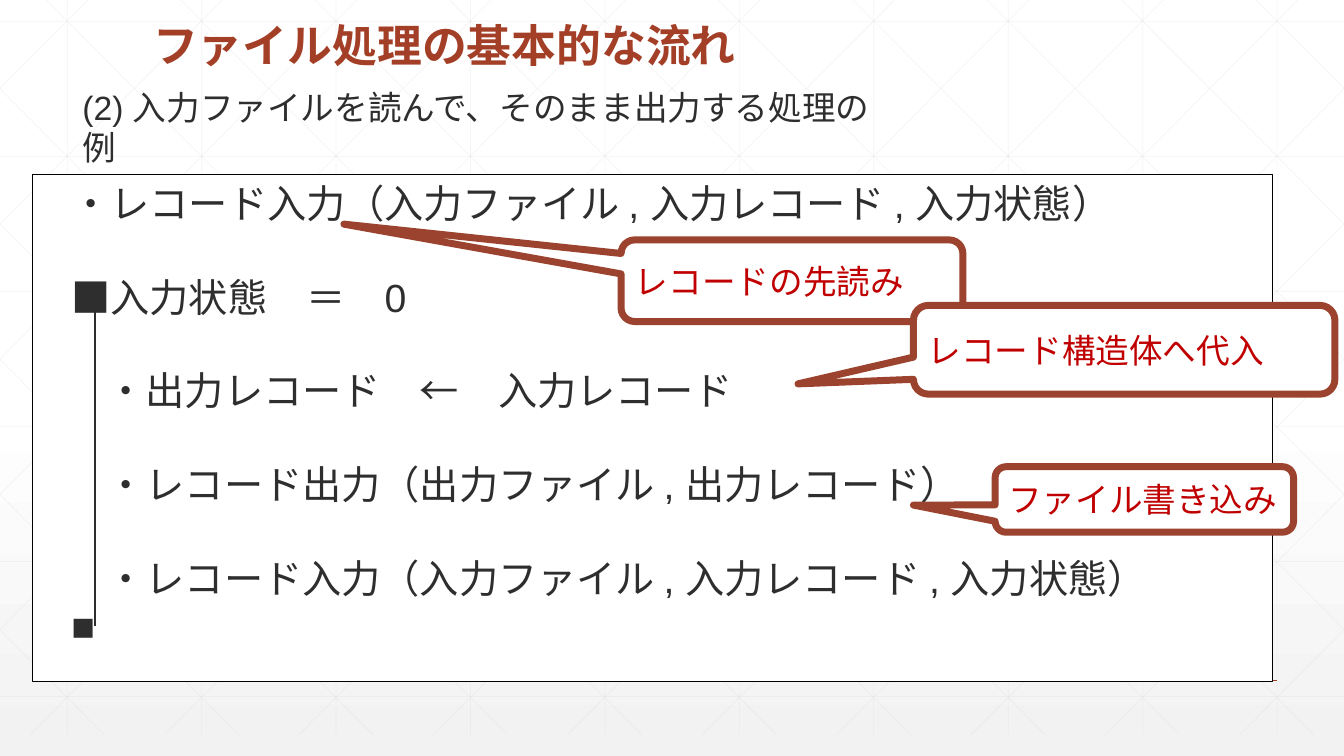
import dataclasses

import lxml.etree
import pptx
import pptx.dml.color
import pptx.enum.shapes
import pptx.enum.text
import pptx.oxml.ns
import pptx.util

Inches = pptx.util.Inches
Shape = pptx.enum.shapes.MSO_SHAPE
Anchor = pptx.enum.text.MSO_ANCHOR
qn = pptx.oxml.ns.qn


@dataclasses.dataclass(frozen=True)
class Theme:
    latin: str = "Arial"
    japanese: str = "Noto Sans CJK JP"
    title: str = "A43F27"
    text: str = "2D2E2D"
    note: str = "C00000"
    note_edge: str = "9B432E"
    grid: str = "D9D9D9"
    white: str = "FFFFFF"
    black: str = "000000"
    shade: str = "F2F2F2"
    title_size: int = 32
    code_size: int = 28
    note_size: int = 24


def rgb(value):
    return pptx.dml.color.RGBColor.from_string(value)


class SlideBuilder:
    def __init__(self, slide, theme):
        self.slide = slide
        self.theme = theme

    def background(self):
        fill = self.slide.background.fill
        fill.gradient()
        fill.gradient_angle = 270
        for stop, position, color in zip(fill.gradient_stops, (0.53, 1),
                                         (self.theme.white, self.theme.shade)):
            stop.position = position
            stop.color.rgb = rgb(color)

    def line(self, start, end, color, width, opacity=None):
        line = self.slide.shapes.add_connector(
            pptx.enum.shapes.MSO_CONNECTOR.STRAIGHT,
            *(Inches(value) for value in (*start, *end)))
        line.line.color.rgb = rgb(color)
        line.line.width = pptx.util.Pt(width)
        properties = line._element.spPr
        if opacity is not None:
            tint = properties.find(".//" + qn("a:srgbClr"))
            lxml.etree.SubElement(tint, qn("a:alpha"), val=str(opacity * 1000))
        lxml.etree.SubElement(properties, qn("a:effectLst"))

    def paragraph(self, para, text, size, color, bold=False):
        para.alignment = pptx.enum.text.PP_ALIGN.LEFT
        span = para.add_run()
        span.text = text
        span.font.name = self.theme.latin
        span.font.size = pptx.util.Pt(size)
        span.font.bold = bold
        span.font.color.rgb = rgb(color)
        lxml.etree.SubElement(span.font._element, qn("a:ea"),
                              typeface=self.theme.japanese)

    def text(self, area, text, size, color, anchor=Anchor.TOP, bold=False):
        box = self.slide.shapes.add_textbox(*map(Inches, area))
        box.text_frame.word_wrap = True
        box.text_frame.vertical_anchor = anchor
        para = box.text_frame.paragraphs[0]
        self.paragraph(para, text, size, color, bold)
        return para

    def shape(self, kind, area, edge, width, anchor):
        shape = self.slide.shapes.add_shape(kind, *map(Inches, area))
        shape.shadow.inherit = False
        shape.fill.solid()
        shape.fill.fore_color.rgb = rgb(self.theme.white)
        shape.line.color.rgb = rgb(edge)
        shape.line.width = pptx.util.Pt(width)
        shape.text_frame.word_wrap = True
        shape.text_frame.vertical_anchor = anchor
        return shape

    def code(self, area, lines, pitch):
        frame = self.shape(Shape.RECTANGLE, area, self.theme.black, 0.5,
                           Anchor.TOP).text_frame
        for index, (text, indent, gap) in enumerate(lines):
            para = frame.add_paragraph() if index else frame.paragraphs[0]
            para.line_spacing = pptx.util.Pt(pitch)
            para.space_before = pptx.util.Pt(gap * pitch)
            para._p.get_or_add_pPr().set("marL", str(Inches(indent)))
            self.paragraph(para, text, self.theme.code_size, self.theme.text)

    def callout(self, area, pointer, text):
        shape = self.shape(Shape.ROUNDED_RECTANGULAR_CALLOUT, area,
                           self.theme.note_edge, 5, Anchor.MIDDLE)
        shape.adjustments[0], shape.adjustments[1] = pointer
        self.paragraph(shape.text_frame.paragraphs[0], text,
                       self.theme.note_size, self.theme.note)

    def grid(self, width, top, bottom):
        step, run = 4 / 3, 7.45
        slope = (bottom - top) / run
        lines = []
        for column in range(10):
            x = step * (column + 0.5)
            lines.append(((x, top), (x, bottom)))
        for row in range(6):
            y = 0.21 + 1.34 * row
            lines.append(((0, y), (width, y)))
        # Diagonals are clipped at the slide sides and mirrored
        for column in range(-5, 10):
            x = 0.25 + step * column
            left, right = max(x, 0), min(x + run, width)
            y_left = top + (left - x) * slope
            y_right = top + (right - x) * slope
            lines.append(((left, y_left), (right, y_right)))
            lines.append(((width - left, y_left), (width - right, y_right)))
        for start, end in lines:
            self.line(start, end, self.theme.grid, 0.5, opacity=25)


def main():
    theme = Theme()
    deck = pptx.Presentation()
    deck.slide_width, deck.slide_height = Inches(13.33), Inches(7.5)
    page = SlideBuilder(deck.slides.add_slide(deck.slide_layouts[6]), theme)

    # Backdrop
    page.background()
    page.grid(13.33, -0.21, 7.29)
    page.line((0.67, 6.75), (12.67, 6.75), theme.title, 1)

    # Heading
    title = page.text((1.42, -0.48, 10.5, 1.25), "ファイル処理の基本的な流れ",
                      theme.title_size, theme.title, Anchor.BOTTOM, bold=True)
    title.line_spacing = 0.9

    # Pseudocode: text, indent, lines of space before
    outer, inner = 0.29, 0.64
    page.code((0.32, 1.73, 12.3, 5.03), [
        ("・レコード入力（入力ファイル , 入力レコード , 入力状態）", outer, 0),
        ("■入力状態　＝　0", outer, 1),
        ("・出力レコード　←　入力レコード", inner, 1),
        ("・レコード出力（出力ファイル , 出力レコード）", inner, 1),
        ("・レコード入力（入力ファイル , 入力レコード , 入力状態）", inner, 1),
        ("■", outer, 0),
    ], pitch=33.5)
    subtitle = page.text((0.72, 0.82, 8.06, 0.9),
                         "(2) 入力ファイルを読んで、そのまま出力する処理の例",
                         theme.note_size, theme.text)
    subtitle.line_spacing = pptx.util.Pt(28.5)
    page.line((0.94, 2.93), (0.94, 6.21), theme.text, 1.5)

    # Callouts
    page.callout((6.16, 2.38, 3.39, 0.81), (-1.311, -0.693), "レコードの先読み")
    page.callout((9.06, 3.03, 4.18, 0.88), (-0.774, 0.385), "レコード構造体へ代入")
    page.callout((9.87, 4.63, 2.96, 0.65), (-0.774, 0.086), "ファイル書き込み")

    deck.save("out.pptx")


if __name__ == "__main__":
    main()
